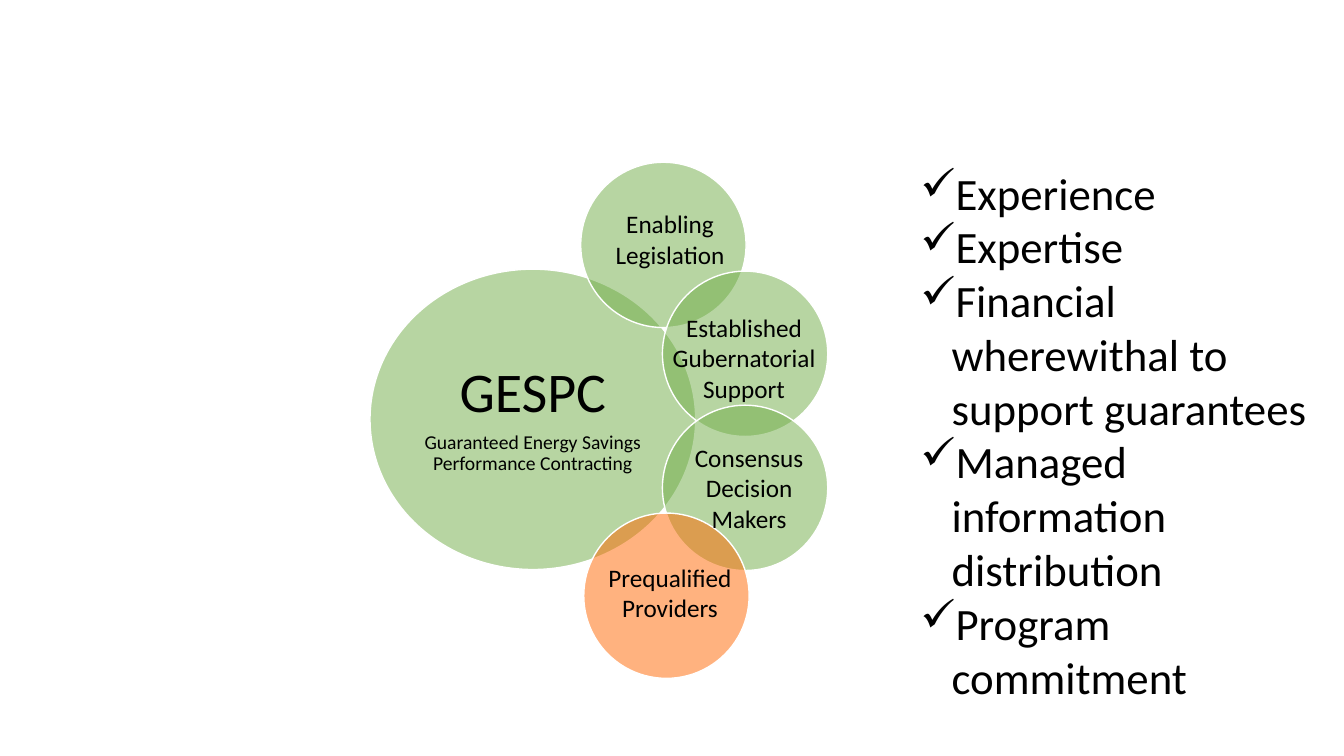
from dataclasses import dataclass

from lxml.etree import SubElement
from pptx import Presentation
from pptx.dml.color import RGBColor
from pptx.enum.shapes import MSO_SHAPE
from pptx.enum.text import MSO_ANCHOR, PP_ALIGN
from pptx.oxml.ns import qn
from pptx.util import Inches, Pt


@dataclass(frozen=True)
class Theme:
    font: str = "Calibri"
    ink: RGBColor = RGBColor(0x00, 0x00, 0x00)
    outline: RGBColor = RGBColor(0xFF, 0xFF, 0xFF)
    green: RGBColor = RGBColor(0x70, 0xAD, 0x47)
    orange: RGBColor = RGBColor(0xFF, 0x66, 0x00)
    acronym_size: int = 40
    meaning_size: int = 14
    label_size: int = 18
    strength_size: int = 32


THEME = Theme()
SATELLITE_SIZE = 1.64

# Circle left and top, colour, label, label box
SATELLITES = [
    (5.76, 1.61, THEME.green, "Enabling Legislation", (5.97, 2.02, 1.35, 0.71)),
    (6.57, 2.69, THEME.green, "Established Gubernatorial Support", (6.51, 3.05, 1.74, 1.01)),
    (6.57, 4.02, THEME.green, "Consensus Decision Makers", (6.75, 4.34, 1.36, 1.01)),
    (5.79, 5.09, THEME.orange, "Prequalified Providers", (5.84, 5.53, 1.61, 0.71)),
]
STRENGTHS = [
    "Experience",
    "Expertise",
    "Financial wherewithal to support guarantees",
    "Managed information distribution",
    "Program commitment",
]


def style_text(paragraph, size):
    for run in paragraph.runs:
        run.font.name = THEME.font
        run.font.size = Pt(size)
        run.font.color.rgb = THEME.ink


def add_circle(slide, box, color):
    circle = slide.shapes.add_shape(MSO_SHAPE.OVAL, *map(Inches, box))
    circle.shadow.inherit = False
    circle.fill.solid()
    circle.fill.fore_color.rgb = color
    circle.line.color.rgb = THEME.outline
    circle.line.width = Pt(1)
    # Half transparent fill, so that overlaps show
    srgb = circle.fill._xPr.find(qn("a:solidFill")).find(qn("a:srgbClr"))
    SubElement(srgb, qn("a:alpha"), val="50000")
    return circle


def add_text(slide, box, text):
    frame = slide.shapes.add_textbox(*map(Inches, box)).text_frame
    frame.word_wrap = True
    frame.text = text
    return frame


def add_label(slide, box, text):
    label = add_text(slide, box, text).paragraphs[0]
    label.alignment = PP_ALIGN.CENTER
    style_text(label, THEME.label_size)


def add_hub(slide):
    frame = add_circle(slide, (3.67, 2.67, 3.23, 2.98), THEME.green).text_frame
    frame.word_wrap = True
    frame.vertical_anchor = MSO_ANCHOR.MIDDLE
    frame.margin_left = frame.margin_right = Inches(0.05)
    frame.margin_top = frame.margin_bottom = Inches(0.05)
    frame.text = "GESPC\nGuaranteed Energy Savings Performance Contracting"
    for paragraph, size in zip(frame.paragraphs, (THEME.acronym_size, THEME.meaning_size)):
        paragraph.alignment = PP_ALIGN.CENTER
        paragraph.line_spacing = 0.9
        paragraph.space_after = Pt(6)
        style_text(paragraph, size)


def add_checklist(slide, box, items):
    frame = add_text(slide, box, "\n".join(items))
    for paragraph in frame.paragraphs:
        properties = paragraph._p.get_or_add_pPr()
        properties.set("marL", str(Inches(0.31)))
        properties.set("indent", str(-Inches(0.31)))
        SubElement(properties, qn("a:buChar"), char="✓")
        style_text(paragraph, THEME.strength_size)


def main():
    presentation = Presentation()
    presentation.slide_width = Inches(13.33)
    presentation.slide_height = Inches(7.5)
    slide = presentation.slides.add_slide(presentation.slide_layouts[6])

    # Provider strengths
    add_checklist(slide, (9.03, 1.59, 4.06, 5.49), STRENGTHS)

    # Hub and its overlapping satellites
    add_hub(slide)
    for left, top, color, _, _ in SATELLITES:
        add_circle(slide, (left, top, SATELLITE_SIZE, SATELLITE_SIZE), color)

    # Labels above all the circles
    for _, _, _, label, label_box in SATELLITES:
        add_label(slide, label_box, label)

    presentation.save("out.pptx")


if __name__ == "__main__":
    main()
